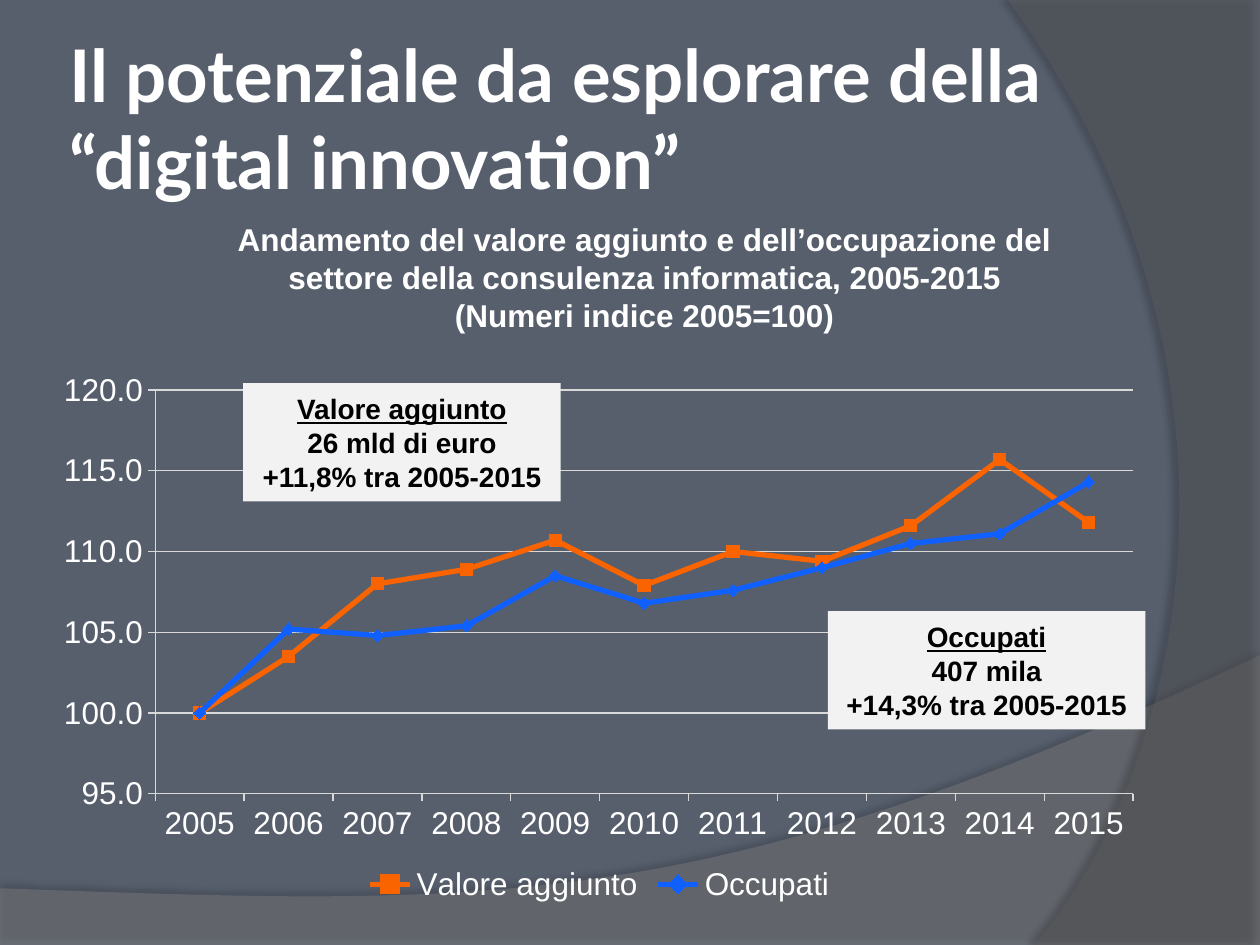
"""Build the slide on value added and employment in IT consulting."""
from lxml import etree
from pptx import Presentation, util as u
from pptx.chart import data
from pptx.dml import color
from pptx.enum import chart as ch, shapes, text
from pptx.oxml import parse_xml
from pptx.oxml import ns

COLUMNS, ROWS = 100, 75
WHITE, GRID, PANEL = "FFFFFF", "D9D9D9", "F2F2F2"

deck = Presentation()
deck.slide_width, deck.slide_height = u.Inches(10), u.Inches(7.5)
column, row = deck.slide_width / COLUMNS, deck.slide_height / ROWS
slide = deck.slides.add_slide(deck.slide_layouts[6])


def paint(fill, value):
    fill.solid()
    fill.fore_color.rgb = color.RGBColor.from_string(value)


def area(left, top, width, height):
    return [round(n * step) for n, step in
            zip((left, top, width, height), (column, row, column, row))]


paint(slide.background.fill, "575F6D")

swooshes = [
    ([(0, 75.1), (100, 75.1)], [(100, 52), (55.9, 72.9), (39.1, 71.9), (0, 70.5)],
     "7F7F7F", 45, 35, 3.5, 270),
    ([(100, 0), (100, 75)], [(82.1, 75), (93.5, 61.9), (101.8, 30), (80, 0)],
     "5E5E5E", 40, 45, 4, 180),
]
for corners, bezier, tint, opacity, shade, distance, angle in swooshes:
    outline = list(corners)
    for step in range(41):
        t = step / 40
        weights = ((1 - t) ** 3, 3 * t * (1 - t) ** 2, 3 * t * t * (1 - t), t ** 3)
        outline.append(tuple(sum(w * point[axis] for w, point in zip(weights, bezier))
                             for axis in (0, 1)))
    points = [(round(x * column), round(y * row)) for x, y in outline]
    builder = slide.shapes.build_freeform(*points[0])
    builder.add_line_segments(points[1:], close=True)
    swoosh = builder.convert_to_shape()
    paint(swoosh.fill, tint)
    swoosh.line.fill.background()
    tone = swoosh._element.spPr.find(".//" + ns.qn("a:srgbClr"))
    etree.SubElement(tone, ns.qn("a:alpha"), val=str(opacity * 1000))
    swoosh._element.spPr.append(parse_xml(
        f'<a:effectLst {ns.nsdecls("a")}><a:outerShdw blurRad="{u.Pt(4)}" '
        f'dist="{u.Pt(distance)}" dir="{angle * 60000}" algn="ctr" rotWithShape="0">'
        f'<a:srgbClr val="000000"><a:alpha val="{shade * 1000}"/></a:srgbClr>'
        '</a:outerShdw></a:effectLst>'))

heading = slide.shapes.add_textbox(*area(5, 3, 81.7, 12.5)).text_frame
heading.word_wrap = True
heading.vertical_anchor = text.MSO_ANCHOR.MIDDLE
heading.margin_left = heading.margin_right = u.Inches(0.05)
heading.margin_top = heading.margin_bottom = u.Inches(0.05)
title = heading.paragraphs[0].add_run()
title.text = "Il potenziale da esplorare della “digital innovation”"
title.font.name, title.font.size, title.font.bold = "Lato", u.Pt(41.4), True
paint(title.font.fill, WHITE)

indices = data.CategoryChartData(number_format="0.0")
indices.categories = [str(year) for year in range(2005, 2016)]
indices.add_series("Valore aggiunto", (100, 103.5, 108, 108.9, 110.7, 107.9,
                                       110, 109.4, 111.6, 115.7, 111.8))
indices.add_series("Occupati", (100, 105.2, 104.8, 105.4, 108.5, 106.8,
                                107.6, 109, 110.5, 111.1, 114.3))
trend = slide.shapes.add_chart(ch.XL_CHART_TYPE.LINE_MARKERS,
                               *area(3.5, 28.8, 88.2, 43.3), indices).chart
trend.has_title = False
trend.font.name, trend.font.size = "Arial", u.Pt(18)
paint(trend.font.fill, WHITE)
trend.has_legend = True
trend.legend.position = ch.XL_LEGEND_POSITION.BOTTOM
trend.legend.include_in_layout = False

years, levels = trend.category_axis, trend.value_axis
levels.minimum_scale, levels.maximum_scale, levels.major_unit = 95, 120, 5
levels.tick_labels.number_format = "0.0"
levels.tick_labels.number_format_is_linked = False
levels.has_major_gridlines = True
for axis in (years, levels):
    axis.major_tick_mark = ch.XL_TICK_MARK.OUTSIDE
for rule in (years.format.line, levels.format.line, levels.major_gridlines.format.line):
    paint(rule.fill, GRID)
    rule.width = u.Pt(0.75)

plot_layout = "".join(f'<c:{key} val="{value}"/>' for key, value in (
    ("layoutTarget", "inner"), ("xMode", "edge"), ("yMode", "edge"),
    ("x", 0.1), ("y", 0.05), ("w", 0.88), ("h", 0.74)))
plot_area = trend._chartSpace.chart.plotArea
for automatic in plot_area.findall(ns.qn("c:layout")):
    plot_area.remove(automatic)
plot_area.insert(0, parse_xml(f'<c:layout {ns.nsdecls("c")}><c:manualLayout>'
                              f'{plot_layout}</c:manualLayout></c:layout>'))

looks = [("FA6400", ch.XL_MARKER_STYLE.SQUARE), ("1060FF", ch.XL_MARKER_STYLE.DIAMOND)]
for series, (hue, marker) in zip(trend.plots[0].series, looks):
    series.smooth = False
    series.format.line.width = u.Pt(3)
    series.marker.style, series.marker.size = marker, 7
    for fill in (series.format.line.fill, series.marker.format.fill,
                 series.marker.format.line.fill):
        paint(fill, hue)

callouts = [
    (19.3, 30.4, ("Valore aggiunto", "26 mld di euro", "+11,8% tra 2005-2015")),
    (65.7, 48.5, ("Occupati", "407 mila", "+14,3% tra 2005-2015")),
]
for left, top, facts in callouts:
    panel = slide.shapes.add_shape(shapes.MSO_SHAPE.RECTANGLE, *area(left, top, 25.2, 9.4))
    panel.shadow.inherit = False
    paint(panel.fill, PANEL)
    panel.line.fill.background()
    frame = panel.text_frame
    frame.word_wrap = True
    frame.vertical_anchor = text.MSO_ANCHOR.MIDDLE
    for number, fact in enumerate(facts):
        paragraph = frame.add_paragraph() if number else frame.paragraphs[0]
        paragraph.alignment = text.PP_ALIGN.CENTER
        run = paragraph.add_run()
        run.text = fact
        run.font.name, run.font.size, run.font.bold = "Arial", u.Pt(16), True
        run.font.underline = number == 0
        paint(run.font.fill, "000000")

caption = slide.shapes.add_textbox(*area(17.7, 17, 66.9, 10.1)).text_frame
caption.word_wrap = True
caption.auto_size = text.MSO_AUTO_SIZE.SHAPE_TO_FIT_TEXT
caption.paragraphs[0].alignment = text.PP_ALIGN.CENTER
subject = caption.paragraphs[0].add_run()
subject.text = ("Andamento del valore aggiunto e dell’occupazione del settore della "
                "consulenza informatica, 2005-2015 (Numeri indice 2005=100)")
subject.font.name, subject.font.size, subject.font.bold = "Arial", u.Pt(18), True
paint(subject.font.fill, WHITE)

deck.save("out.pptx")
